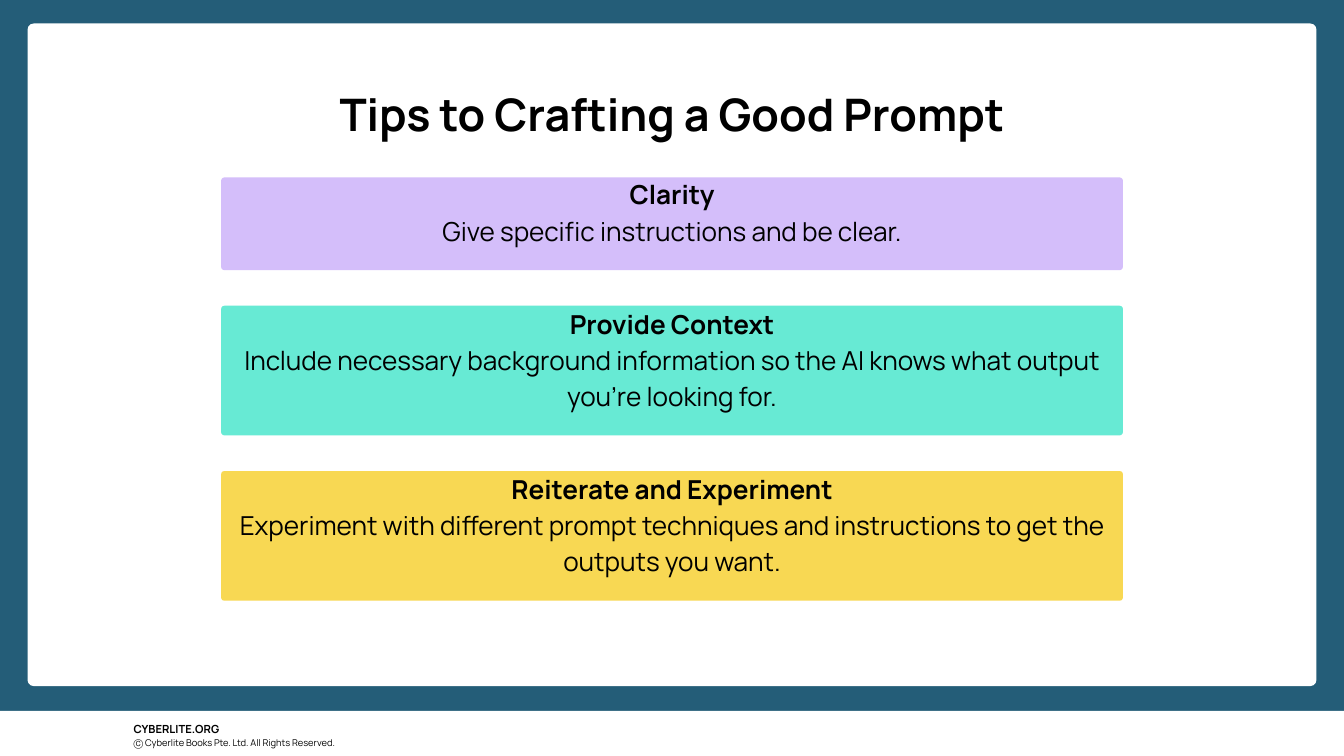
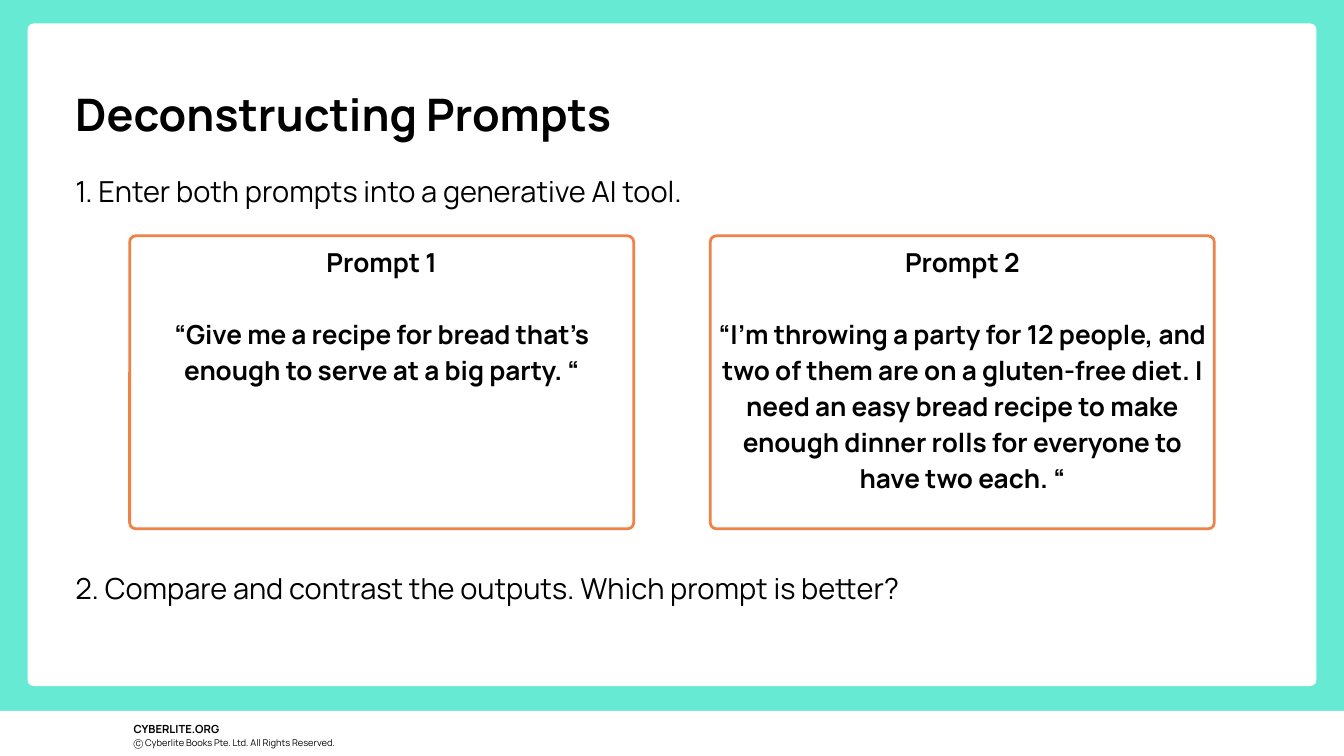
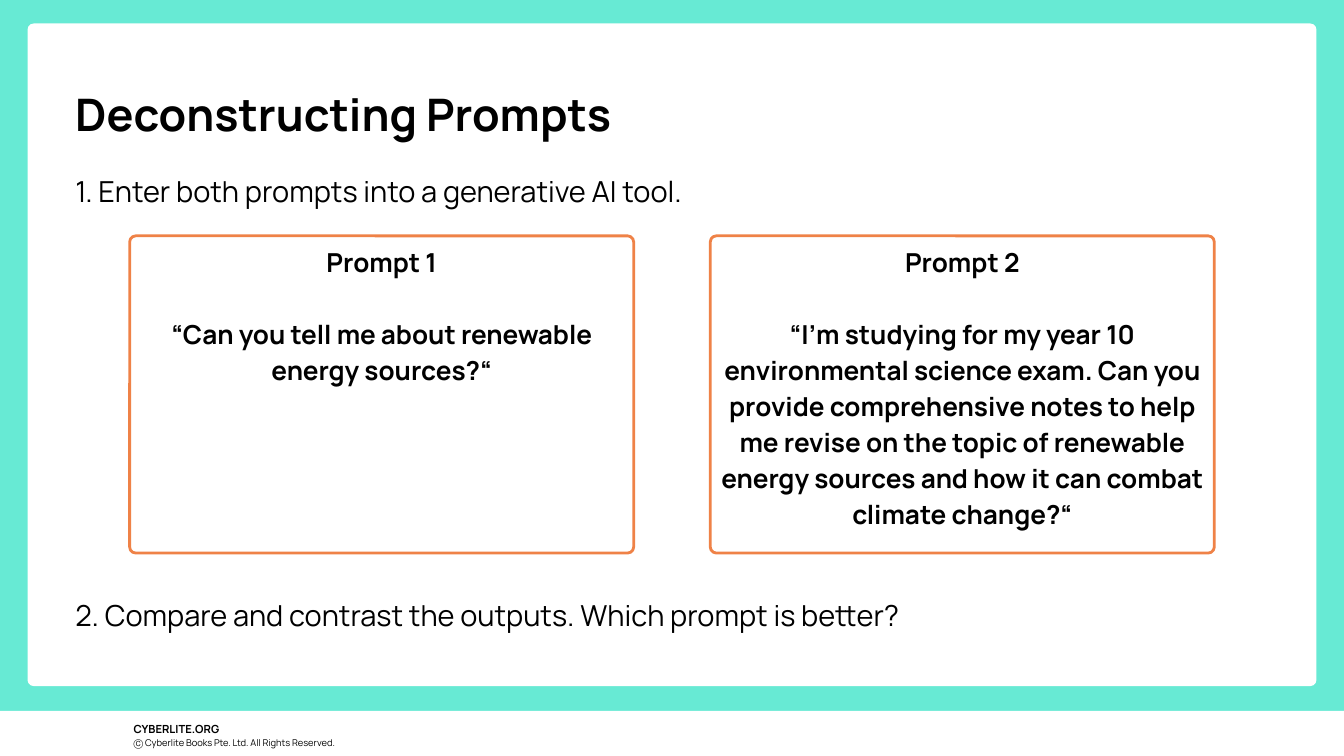
from pptx import Presentation
from pptx.dml.color import RGBColor
from pptx.enum.shapes import MSO_SHAPE
from pptx.enum.text import MSO_ANCHOR, PP_ALIGN
from pptx.util import Inches, Pt

RECTANGLE, ROUNDED = MSO_SHAPE.RECTANGLE, MSO_SHAPE.ROUNDED_RECTANGLE
LEFT, CENTER = PP_ALIGN.LEFT, PP_ALIGN.CENTER
TOP, BOTTOM = MSO_ANCHOR.TOP, MSO_ANCHOR.BOTTOM

# Content
TIPS_TITLE = "Tips to Crafting a Good Prompt"
TIPS = [  # heading, advice, colour, card height
    ("Clarity", "Give specific instructions and be clear.", "lilac", 1.38),
    ("Provide Context",
     "Include necessary background information so the AI knows what output "
     "you’re looking for.", "mint", 1.93),
    ("Reiterate and Experiment",
     "Experiment with different prompt techniques and instructions to get "
     "the outputs you want.", "yellow", 1.93),
]
EXERCISE_TITLE = "Deconstructing Prompts"
STEPS = ("1. Enter both prompts into a generative AI tool.",
         "2. Compare and contrast the outputs. Which prompt is better?")
EXERCISES = [
    {"prompts": ("“Give me a recipe for bread that’s enough to serve at a "
                 "big party. “",
                 "“I’m throwing a party for 12 people, and two of them are on "
                 "a gluten-free diet. I need an easy bread recipe to make "
                 "enough dinner rolls for everyone to have two each. “"),
     "box_height": 4.36, "question_top": 8.28},
    {"prompts": ("“Can you tell me about renewable energy sources?“",
                 "“I’m studying for my year 10 environmental science exam. "
                 "Can you provide comprehensive notes to help me revise on "
                 "the topic of renewable energy sources and how it can "
                 "combat climate change?“"),
     "box_height": 4.72, "question_top": 8.68},
]
FOOTER_SITE = "CYBERLITE.ORG"
FOOTER_RIGHTS = "Ⓒ Cyberlite Books Pte. Ltd. All Rights Reserved."

# Theme and page grid, in points and inches
THEME = {
    "font": "Manrope",
    "colors": {"black": "000000", "white": "FFFFFF", "navy": "245D78",
               "mint": "67EAD4", "lilac": "D4BEFA", "yellow": "F8D853",
               "orange": "EF8247"},
    "sizes": {"title": 48, "step": 31, "body": 28, "site": 12, "rights": 10},
    "loose": 1.4, "tight": 1.15, "border": 3,
}
PAGE_W, PAGE_H = 20, 11.25
FOOTER_H = 0.67
PANEL = (0.41, 0.35, PAGE_W - 2 * 0.41, 9.86)
MARGIN = 1.12
TITLE_TOP, TITLE_H = 0.97, 0.95
STEP_W = 17.75
CARD_W, CARD_TOP, CARD_GAP = 13.42, 2.64, 0.53
BOX_W, BOX_TOP, BOX_GAP = 7.5, 3.51, 1.14
INSET = 0.06


def color(name):
    return RGBColor.from_string(THEME["colors"][name])


def write(shape, paragraphs, *, size, align=LEFT, spacing=THEME["loose"],
          anchor=TOP, insets=(0, 0, 0, 0), gap=0):
    """Write (text, bold) paragraphs; gap is the space between them."""
    frame = shape.text_frame
    frame.word_wrap = True
    frame.vertical_anchor = anchor
    (frame.margin_left, frame.margin_top,
     frame.margin_right, frame.margin_bottom) = map(Inches, insets)
    for index, (text, bold) in enumerate(paragraphs):
        paragraph = frame.add_paragraph() if index else frame.paragraphs[0]
        paragraph.alignment = align
        paragraph.line_spacing = spacing
        if index and gap:
            paragraph.space_before = Pt(gap)
        run = paragraph.add_run()
        run.text = text
        run.font.name = THEME["font"]
        run.font.size = Pt(THEME["sizes"][size])
        run.font.bold = bold
        run.font.color.rgb = color("black")


def add_label(slide, area, text, *, bold=False, **style):
    write(slide.shapes.add_textbox(*map(Inches, area)), [(text, bold)], **style)


def add_block(slide, area, fill, *, radius=0, border=None):
    block = slide.shapes.add_shape(ROUNDED if radius else RECTANGLE,
                                   *map(Inches, area))
    block.shadow.inherit = False
    if radius:
        block.adjustments[0] = radius / min(area[2:])
    block.fill.solid()
    block.fill.fore_color.rgb = color(fill)
    if border:
        block.line.color.rgb = color(border)
        block.line.width = Pt(THEME["border"])
    else:
        block.line.fill.background()
    return block


def add_page(prs, background, title, title_left, title_w, align):
    slide = prs.slides.add_slide(prs.slide_layouts[6])
    slide.background.fill.solid()
    slide.background.fill.fore_color.rgb = color(background)
    # Footer band
    add_block(slide, (0, PAGE_H - FOOTER_H, PAGE_W, FOOTER_H), "white")
    add_label(slide, (1.99, 10.67, 1.43, 0.2), FOOTER_SITE, size="site", bold=True)
    add_label(slide, (1.99, 10.9, 4.63, 0.17), FOOTER_RIGHTS, size="rights")
    # Panel and title
    add_block(slide, PANEL, "white", radius=0.09)
    add_label(slide, (title_left, TITLE_TOP, title_w, TITLE_H), title,
              size="title", bold=True, align=align)
    return slide


def add_tips(prs):
    slide = add_page(prs, "navy", TIPS_TITLE, 2.04, PAGE_W - 2 * 2.04, CENTER)
    top = CARD_TOP
    for heading, advice, fill, height in TIPS:
        card = add_block(slide, ((PAGE_W - CARD_W) / 2, top, CARD_W, height),
                         fill, radius=0.05)
        write(card, [(heading, True), (advice, False)], size="body",
              align=CENTER, spacing=THEME["tight"], anchor=BOTTOM,
              insets=(INSET, 0, INSET, 0.34))
        top += height + CARD_GAP


def add_exercise(prs, exercise):
    slide = add_page(prs, "mint", EXERCISE_TITLE, MARGIN, 9.64, LEFT)
    # Prompt boxes, centred as a pair
    first_left = (PAGE_W - 2 * BOX_W - BOX_GAP) / 2
    for column, prompt in enumerate(exercise["prompts"]):
        box = add_block(slide, (first_left + column * (BOX_W + BOX_GAP), BOX_TOP,
                                BOX_W, exercise["box_height"]),
                        "white", radius=0.09, border="orange")
        write(box, [(f"Prompt {column + 1}", True), (prompt, True)],
              size="body", align=CENTER, spacing=THEME["tight"],
              insets=(INSET,) * 4, gap=38.6)
    # Steps above and below the boxes
    for step, top in zip(STEPS, (2.38, exercise["question_top"])):
        add_label(slide, (MARGIN, top, STEP_W, 0.61), step, size="step")


def main():
    prs = Presentation()
    prs.slide_width, prs.slide_height = Inches(PAGE_W), Inches(PAGE_H)
    add_tips(prs)
    for exercise in EXERCISES:
        add_exercise(prs, exercise)
    prs.save("out.pptx")


if __name__ == "__main__":
    main()
